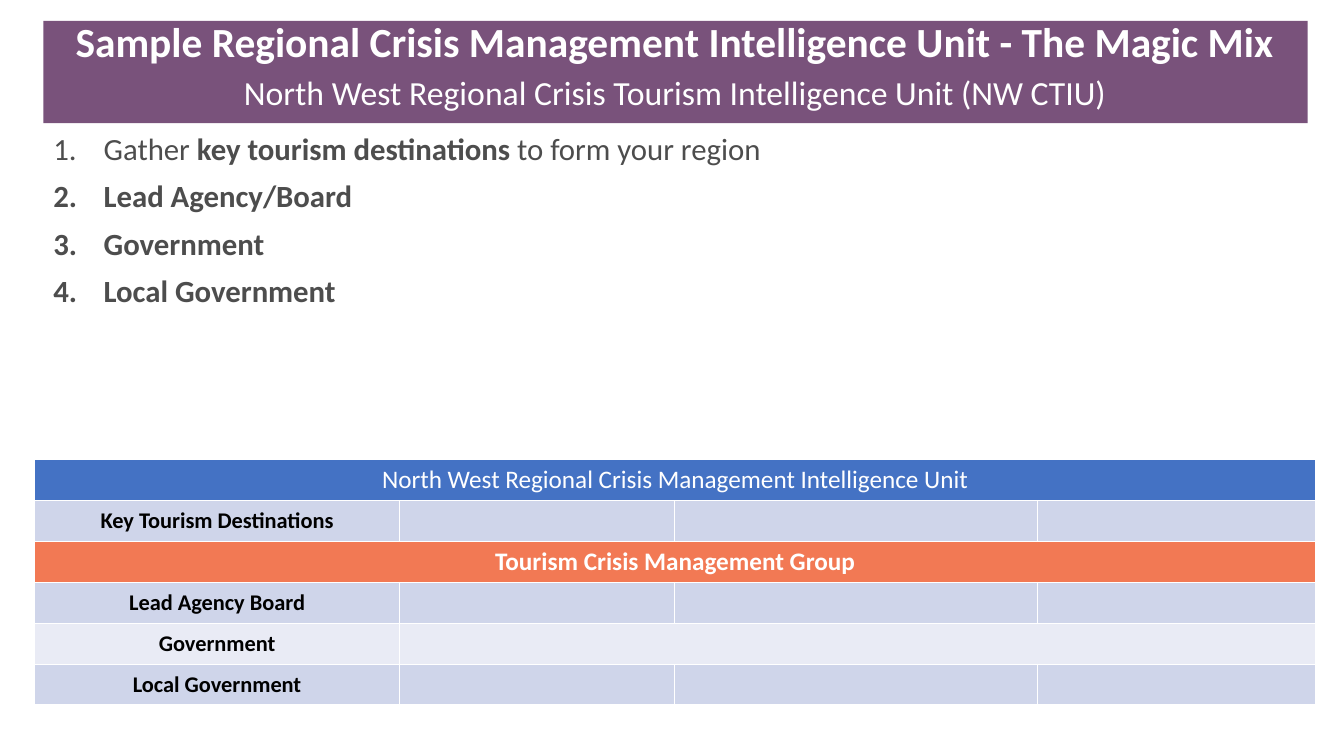
from lxml.etree import SubElement
from pptx import Presentation
from pptx.dml.color import RGBColor
from pptx.enum.shapes import MSO_SHAPE
from pptx.enum.text import MSO_ANCHOR, PP_ALIGN
from pptx.oxml.ns import qn
from pptx.util import Pt

HUES = {
    "plum": "79527B", "white": "FFFFFF", "gray": "4D4D4D", "black": "000000",
    "blue": "4472C4", "coral": "F27954", "band": "CFD5EA", "pale": "E9EBF5",
}
TITLE = [
    ("Sample Regional Crisis Management Intelligence Unit - The Magic Mix", 29.6, True),
    ("North West Regional Crisis Tourism Intelligence Unit (NW CTIU)", 24.1, False),
]
STEPS = [
    [("Gather ", False), ("key tourism destinations ", True), ("to form your region", False)],
    [("Lead Agency/Board", True)],
    [("Government", True)],
    [("Local Government", True)],
]
WIDTHS = [260.6, 196.6, 259.2, 198.7]
HEIGHT = 29.2
ROWS = [
    ("North West Regional Crisis Management Intelligence Unit", "blue", "white", 18, False, 0),
    ("Key Tourism Destinations", "band", "black", 16, True, None),
    ("Tourism Crisis Management Group", "coral", "white", 18, True, 0),
    ("Lead Agency Board", "band", "black", 16, True, None),
    ("Government", "pale", "black", 16, True, 1),
    ("Local Government", "band", "black", 16, True, None),
]


def color(name):
    """Return the named colour."""
    return RGBColor.from_string(HUES[name])


def style(run, size, hue, bold):
    """Set the font of a run."""
    font = run.font
    font.name, font.size, font.bold = "Calibri", Pt(size), bold
    font.color.rgb = color(hue)


def add_title(slide):
    """Add the plum title bar."""
    bar = slide.shapes.add_shape(MSO_SHAPE.RECTANGLE, Pt(31), Pt(15), Pt(903), Pt(73))
    bar.shadow.inherit = False
    bar.fill.solid()
    bar.fill.fore_color.rgb = color("plum")
    bar.line.fill.background()
    frame = bar.text_frame
    frame.word_wrap = True
    frame.vertical_anchor = MSO_ANCHOR.TOP
    frame.text = "\n".join(text for text, size, bold in TITLE)
    for line, (text, size, bold) in zip(frame.paragraphs, TITLE):
        line.alignment = PP_ALIGN.CENTER
        line.line_spacing = 0.8
        line.space_before = Pt(0 if line.text == TITLE[0][0] else 10)
        style(line.runs[0], size, "white", bold)


def add_steps(slide):
    """Add the numbered list."""
    box = slide.shapes.add_textbox(Pt(31), Pt(92.2), Pt(903), Pt(304.6))
    frame = box.text_frame
    frame.word_wrap = True
    for index, parts in enumerate(STEPS):
        line = frame.add_paragraph() if index else frame.paragraphs[0]
        line.line_spacing = 0.9
        line.space_before = Pt(10 if index else 0)
        props = line._p.get_or_add_pPr()
        props.set("marL", str(Pt(36)))
        props.set("indent", str(-Pt(36)))
        SubElement(props, qn("a:buFont"), typeface="+mj-lt")
        SubElement(props, qn("a:buAutoNum"), type="arabicPeriod")
        for text, bold in parts:
            run = line.add_run()
            run.text = text
            style(run, 22, "gray", bold)


def paint(cell, hue):
    """Give a cell its fill and white borders."""
    props = cell._tc.get_or_add_tcPr()
    for side in ("lnL", "lnR", "lnT", "lnB"):
        edge = SubElement(props, qn("a:" + side), w=str(Pt(1)))
        fill = SubElement(edge, qn("a:solidFill"))
        SubElement(fill, qn("a:srgbClr"), val=HUES["white"])
    cell.fill.solid()
    cell.fill.fore_color.rgb = color(hue)


def add_grid(slide):
    """Add the table of the unit."""
    last = len(WIDTHS) - 1
    grid = slide.shapes.add_table(
        len(ROWS), len(WIDTHS), Pt(24.8), Pt(328.4), Pt(sum(WIDTHS)), Pt(HEIGHT * len(ROWS))
    ).table
    for col, width in zip(grid.columns, WIDTHS):
        col.width = Pt(width)
    for index, (text, fill, hue, size, bold, start) in enumerate(ROWS):
        grid.rows[index].height = Pt(HEIGHT)
        for col in range(len(WIDTHS)):
            paint(grid.cell(index, col), fill)
        if start is not None:
            grid.cell(index, start).merge(grid.cell(index, last))
        head = grid.cell(index, 0)
        head.vertical_anchor = MSO_ANCHOR.MIDDLE
        head.text_frame.text = text
        line = head.text_frame.paragraphs[0]
        line.alignment = PP_ALIGN.CENTER
        style(line.runs[0], size, hue, bold)


def main():
    """Build and save the slide."""
    deck = Presentation()
    deck.slide_width, deck.slide_height = Pt(960), Pt(540)
    slide = deck.slides.add_slide(deck.slide_layouts[6])
    add_steps(slide)
    add_title(slide)
    add_grid(slide)
    deck.save("out.pptx")


if __name__ == "__main__":
    main()
